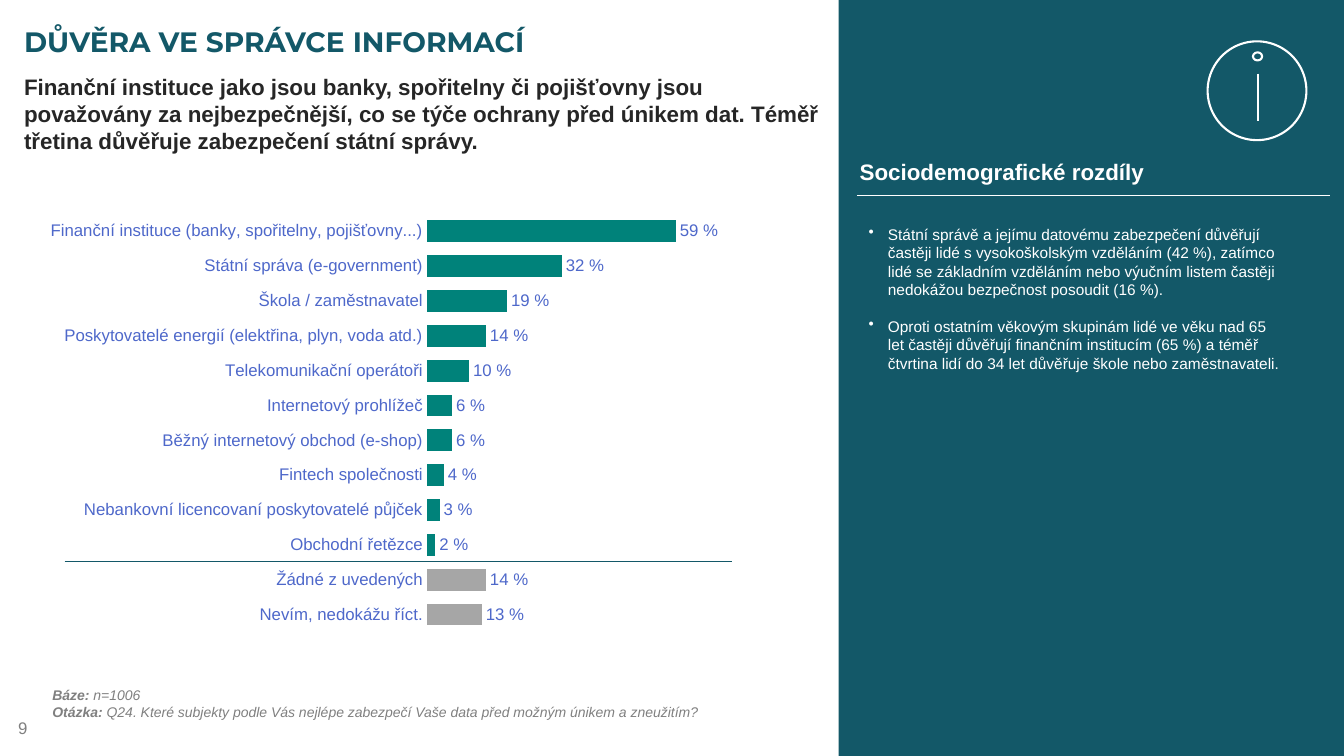
from lxml import etree
from pptx import Presentation
from pptx import util as u
from pptx.chart.data import CategoryChartData
from pptx.dml.color import RGBColor
from pptx.enum import chart as charts, shapes, text
from pptx.oxml import parse_xml
from pptx.oxml.ns import nsdecls, qn

WIDTH, HEIGHT = u.Inches(13.33), u.Inches(7.5)
COLORS = {
    "panel": "135868", "white": "FFFFFF", "dark": "262626", "gray": "808080",
    "label": "4E68CA", "bar": "00827A", "other": "A6A6A6",
}
TRUST = {
    "Finanční instituce (banky, spořitelny, pojišťovny...)": 59,
    "Státní správa (e-government)": 32,
    "Škola / zaměstnavatel": 19,
    "Poskytovatelé energií (elektřina, plyn, voda atd.)": 14,
    "Telekomunikační operátoři": 10,
    "Internetový prohlížeč": 6,
    "Běžný internetový obchod (e-shop)": 6,
    "Fintech společnosti": 4,
    "Nebankovní licencovaní poskytovatelé půjček": 3,
    "Obchodní řetězce": 2,
    "Žádné z uvedených": 14,
    "Nevím, nedokážu říct.": 13,
}
UNDECIDED = (10, 11)
DIFFERENCES = [
    "Státní správě a jejímu datovému zabezpečení důvěřují častěji lidé s vysokoškolským "
    "vzděláním (42 %), zatímco lidé se základním vzděláním nebo výučním listem častěji "
    "nedokážou bezpečnost posoudit (16 %).",
    "Oproti ostatním věkovým skupinám lidé ve věku nad 65 let častěji důvěřují finančním "
    "institucím (65 %) a téměř čtvrtina lidí do 34 let důvěřuje škole nebo zaměstnavateli.",
]


def color(name):
    """Return a named colour."""
    return RGBColor.from_string(COLORS[name])


def place(*shares):
    """Turn percentages of the slide (x, y, x, y) into lengths."""
    return [int(share * size / 100) for share, size in zip(shares, (WIDTH, HEIGHT) * 2)]


def set_font(font, size, name, face="Arial", bold=False, italic=False):
    """Set all the traits of a font."""
    font.size, font.name, font.bold, font.italic = u.Pt(size), face, bold, italic
    font.color.rgb = color(name)


def add_text(slide, box, paragraphs, size, name, face="Arial", bold=False, italic=False,
             inset=(0.1, 0.05), middle=False, wrap=True, bullet=False, gap=0):
    """Add a text box; a paragraph is a string or a list of (text, bold) runs."""
    frame = slide.shapes.add_textbox(*place(*box)).text_frame
    frame.word_wrap = wrap
    frame.margin_left = frame.margin_right = u.Inches(inset[0])
    frame.margin_top = frame.margin_bottom = u.Inches(inset[1])
    frame.vertical_anchor = text.MSO_ANCHOR.MIDDLE if middle else text.MSO_ANCHOR.TOP
    for index, content in enumerate(paragraphs):
        paragraph = frame.add_paragraph() if index else frame.paragraphs[0]
        if bullet:
            properties = paragraph._p.get_or_add_pPr()
            properties.set("marL", str(u.Inches(0.19)))
            properties.set("indent", str(-u.Inches(0.19)))
            etree.SubElement(properties, qn("a:buChar")).set("char", "•")
        if index and gap:
            paragraph.space_before = u.Pt(gap)
        runs = [(content, bold)] if isinstance(content, str) else content
        for words, heavy in runs:
            run = paragraph.add_run()
            run.text = words
            set_font(run.font, size, name, face, heavy, italic)


def add_figure(slide, kind, box, fill=None, line=None):
    """Add a preset shape with a fill or an outline."""
    shape = slide.shapes.add_shape(kind, *place(*box))
    shape.shadow.inherit = False
    if fill:
        shape.fill.solid()
        shape.fill.fore_color.rgb = color(fill)
    else:
        shape.fill.background()
    if line:
        shape.line.color.rgb = color(line)
        shape.line.width = u.Pt(1.5)
    else:
        shape.line.fill.background()


def add_rule(slide, ends, name, width):
    """Add a straight line."""
    rule = slide.shapes.add_connector(shapes.MSO_CONNECTOR.STRAIGHT, *place(*ends))
    rule.line.color.rgb = color(name)
    rule.line.width = u.Pt(width)
    etree.SubElement(rule._element.spPr, qn("a:effectLst"))


def set_plot_area(chart, **shares):
    """Fix the inner plot area as shares of the chart."""
    area = chart._chartSpace.chart.plotArea
    for layout in area.findall(qn("c:layout")):
        area.remove(layout)
    values = "".join(f'<c:{key} val="{share}"/>' for key, share in shares.items())
    area.insert(0, parse_xml(
        f'<c:layout {nsdecls("c")}><c:manualLayout><c:layoutTarget val="inner"/>'
        f'<c:xMode val="edge"/><c:yMode val="edge"/>{values}</c:manualLayout></c:layout>'))


def add_trust_chart(slide, box):
    """Add the bar chart of trusted institutions."""
    data = CategoryChartData()
    data.categories = list(TRUST)
    data.add_series("Series 1", list(TRUST.values()))
    chart = slide.shapes.add_chart(
        charts.XL_CHART_TYPE.BAR_CLUSTERED, *place(*box), data).chart
    chart.has_legend = chart.has_title = False
    set_font(chart.font, 10, "label")
    set_plot_area(chart, x=0.494, y=0.092, w=0.506, h=0.906)

    categories, values = chart.category_axis, chart.value_axis
    categories.reverse_order = True
    categories.major_tick_mark = charts.XL_TICK_MARK.NONE
    categories.format.line.fill.background()
    set_font(categories.tick_labels.font, 12, "label")
    values.minimum_scale, values.maximum_scale = 0, 100
    values.has_major_gridlines = values.visible = False

    plot = chart.plots[0]
    plot.gap_width = 60
    plot.vary_by_categories = False
    series = plot.series[0]
    series.format.fill.solid()
    series.format.fill.fore_color.rgb = color("bar")
    for index in UNDECIDED:
        fill = series.points[index].format.fill
        fill.solid()
        fill.fore_color.rgb = color("other")
    labels = series.data_labels
    labels.show_value = True
    labels.number_format = '#,##0\\ "%";\\-#,##0"%"'
    labels.number_format_is_linked = False
    labels.position = charts.XL_LABEL_POSITION.OUTSIDE_END
    set_font(labels.font, 12, "label")


def add_info_icon(slide):
    """Draw the circled letter i."""
    oval = shapes.MSO_SHAPE.OVAL
    add_figure(slide, oval, (89.85, 5.47, 7.35, 13.07), line="white")
    add_rule(slide, (93.6, 9.73, 93.6, 16), "white", 1.5)
    add_figure(slide, oval, (93.23, 6.93, 0.68, 1.07), line="white")


def main():
    """Build the slide and save it."""
    presentation = Presentation()
    presentation.slide_width, presentation.slide_height = WIDTH, HEIGHT
    slide = presentation.slides.add_slide(presentation.slide_layouts[6])

    add_text(slide, (0.38, 93.6, 23.33, 5.33), ["9"], 12, "gray",
             inset=(0.13, 0.07), middle=True)
    add_figure(slide, shapes.MSO_SHAPE.RECTANGLE, (62.4, 0, 37.6, 100), fill="panel")
    add_text(slide, (1.05, 1.87, 97.88, 7.07), ["DŮVĚRA VE SPRÁVCE INFORMACÍ"], 20, "panel",
             face="Montserrat", bold=True, middle=True)
    add_text(slide, (1.05, 9.07, 61.35, 9.33), [
        "Finanční instituce jako jsou banky, spořitelny či pojišťovny jsou považovány za "
        "nejbezpečnější, co se týče ochrany před únikem dat. Téměř třetina důvěřuje "
        "zabezpečení státní správy."], 16, "dark", bold=True)
    add_text(slide, (3.9, 90.8, 86.85, 4.53), [
        [("Báze: ", True), ("n=1006", False)],
        [("Otázka: ", True), ("Q24. Které subjekty podle Vás nejlépe zabezpečí Vaše data "
                              "před možným únikem a zneužitím?", False)],
    ], 10, "gray", italic=True, inset=(0, 0))

    add_rule(slide, (63.75, 25.87, 98.93, 25.87), "white", 0.5)
    add_text(slide, (63.23, 20.27, 22.95, 4.93), ["Sociodemografické rozdíly"], 16, "white",
             bold=True, wrap=False)
    add_text(slide, (63.9, 29.07, 32.48, 23.6), DIFFERENCES, 11, "white",
             bullet=True, gap=13)
    add_info_icon(slide)
    add_rule(slide, (4.8, 74.27, 54.45, 74.27), "panel", 0.5)
    add_trust_chart(slide, (1.13, 22.67, 62.03, 61.07))
    presentation.save("out.pptx")


if __name__ == "__main__":
    main()
